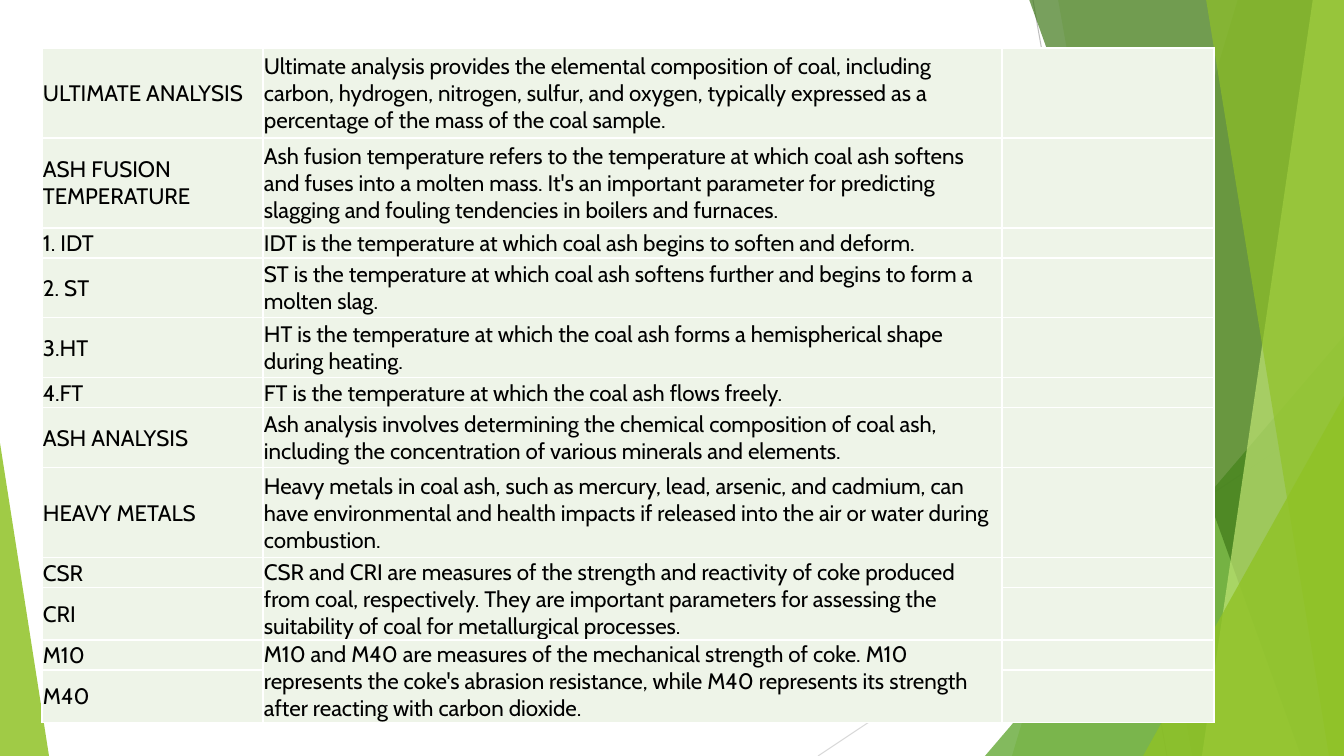
"""Build a slide with a table of coal quality parameters over green facets."""
import pptx
import pptx.dml.color
import pptx.enum.shapes
import pptx.enum.text
import pptx.oxml
import pptx.oxml.ns
import pptx.oxml.xmlchemy
import pptx.util

EMU_PER_PX = 914400 / 100.8
WIDTH, HEIGHT = 1344, 756
FONT = "Cabin"
COLORS = {
    "green": "90C226",
    "leaf": "54A021",
    "forest": "3F7819",
    "lime": "C0E474",
    "gray": "BFBFBF",
    "light_gray": "D9D9D9",
    "cell": "EEF4E8",
    "border": "FFFFFF",
    "text": "000000",
}
COLUMN_WIDTHS = [221, 739, 212]
ROWS = [
    (90, "ULTIMATE ANALYSIS", "Ultimate analysis provides the elemental composition of coal, including carbon, hydrogen, nitrogen, sulfur, and oxygen, typically expressed as a percentage of the mass of the coal sample."),
    (90, "ASH FUSION TEMPERATURE", "Ash fusion temperature refers to the temperature at which coal ash softens and fuses into a molten mass. It's an important parameter for predicting slagging and fouling tendencies in boilers and furnaces."),
    (30, "1. IDT", "IDT is the temperature at which coal ash begins to soften and deform."),
    (60, "2. ST", "ST is the temperature at which coal ash softens further and begins to form a molten slag."),
    (60, "3.HT", "HT is the temperature at which the coal ash forms a hemispherical shape during heating."),
    (30, "4.FT", "FT is the temperature at which the coal ash flows freely."),
    (60, "ASH ANALYSIS", "Ash analysis involves determining the chemical composition of coal ash, including the concentration of various minerals and elements."),
    (90, "HEAVY METALS", "Heavy metals in coal ash, such as mercury, lead, arsenic, and cadmium, can have environmental and health impacts if released into the air or water during combustion."),
    (30, "CSR", "CSR and CRI are measures of the strength and reactivity of coke produced from coal, respectively. They are important parameters for assessing the suitability of coal for metallurgical processes."),
    (52, "CRI", ""),
    (30, "M10", "M10 and M40 are measures of the mechanical strength of coke. M10 represents the coke's abrasion resistance, while M40 represents its strength after reacting with carbon dioxide."),
    (52, "M40", ""),
]


def px(length):
    """Turn pixels into EMU."""
    return pptx.util.Emu(round(length * EMU_PER_PX))


def rgb(name):
    """Look up a named colour."""
    return pptx.dml.color.RGBColor.from_string(COLORS[name])


def add_child(parent, tag, **attributes):
    """Append an XML element with attributes and return it."""
    child = pptx.oxml.xmlchemy.OxmlElement(tag)
    for key, value in attributes.items():
        child.set(key, str(value))
    parent.append(child)
    return child


def paint_facet(shape, color, opacity):
    """Fill a facet with a translucent colour and no outline."""
    shape.shadow.inherit = False
    shape.line.fill.background()
    shape.fill.solid()
    shape.fill.fore_color.rgb = rgb(color)
    tag = pptx.oxml.ns.qn("a:srgbClr")
    fill_color = next(shape.fill._xPr.iter(tag))
    add_child(fill_color, "a:alpha", val=opacity * 1000)


def add_line(page, start, end, color):
    """Draw a thin background line."""
    line = page.shapes.add_connector(
        pptx.enum.shapes.MSO_CONNECTOR.STRAIGHT, *map(px, start + end))
    line.line.color.rgb = rgb(color)
    line.line.width = pptx.util.Pt(0.75)
    add_child(line._element.spPr, "a:effectLst")


def add_band(page, top_x, bottom_x, color, opacity):
    """Draw a slanted band that reaches the right edge."""
    outline = page.shapes.build_freeform(top_x, -1, scale=EMU_PER_PX)
    outline.add_line_segments([(WIDTH, -1), (WIDTH, HEIGHT), (bottom_x, HEIGHT)])
    paint_facet(outline.convert_to_shape(), color, opacity)


def add_corner(page, left, top, width, apex, color, opacity):
    """Draw a triangle that stands on the bottom edge."""
    shape = page.shapes.add_shape(
        pptx.enum.shapes.MSO_SHAPE.ISOSCELES_TRIANGLE,
        px(left), px(top), px(width), px(HEIGHT - top))
    shape.adjustments[0] = apex
    paint_facet(shape, color, opacity)


def add_text(para, text, size=16, font=FONT, color="text"):
    """Write formatted text, or only set the size of an empty paragraph."""
    if not text:
        para._p.get_or_add_endParaRPr().set("sz", str(size * 100))
        return
    span = para.add_run()
    span.text = text
    span.font.size = pptx.util.Pt(size)
    span.font.name = font
    span.font.color.rgb = rgb(color)


def format_cell(cell, text):
    """Set the margins, borders, fill and text of a table cell."""
    cell.margin_left = cell.margin_right = cell.margin_top = px(1)
    cell.margin_bottom = 0
    cell.vertical_anchor = pptx.enum.text.MSO_ANCHOR.MIDDLE
    properties = cell._tc.get_or_add_tcPr()
    for side in ("a:lnL", "a:lnR", "a:lnT", "a:lnB"):
        border = add_child(properties, side, w=pptx.util.Pt(1))
        fill = add_child(border, "a:solidFill")
        add_child(fill, "a:srgbClr", val=COLORS["border"])
    cell.fill.solid()
    cell.fill.fore_color.rgb = rgb("cell")
    add_text(cell.text_frame.paragraphs[0], text)


def add_parameter_table(page, left, top):
    """Add the table, merging each description with the empty one below it."""
    heights = [row[0] for row in ROWS]
    table = page.shapes.add_table(
        len(ROWS), len(COLUMN_WIDTHS), px(left), px(top),
        px(sum(COLUMN_WIDTHS)), px(sum(heights))).table
    table.first_row = table.horz_banding = False
    for column, width in zip(table.columns, COLUMN_WIDTHS):
        column.width = px(width)
    for index, (height, name, description) in enumerate(ROWS):
        table.rows[index].height = px(height)
        for column, text in enumerate((name, description, "")):
            format_cell(table.cell(index, column), text)
        if not description:
            table.cell(index - 1, 1).merge(table.cell(index, 1))


def add_background(page):
    """Draw the lines and green facets behind the table."""
    add_line(page, (1033, 0), (1167, HEIGHT), "gray")
    add_line(page, (WIDTH, 406), (818, HEIGHT), "light_gray")
    add_band(page, 1238, 1012, "green", 30)
    add_band(page, 1058, 1192, "green", 20)
    add_corner(page, 985, 336, 359, 1, "leaf", 72)
    add_band(page, 1029, 1301, "forest", 70)
    add_band(page, 1313, 1202, "lime", 70)
    add_band(page, 1206, 1329, "green", 65)
    add_corner(page, 1143, 396, 201, 1, "green", 80)
    add_corner(page, 0, 443, 49, 0, "green", 85)


def main():
    """Build and save the deck."""
    deck = pptx.Presentation()
    deck.slide_width, deck.slide_height = px(WIDTH), px(HEIGHT)
    page = deck.slides.add_slide(deck.slide_layouts[6])
    add_background(page)
    add_parameter_table(page, 42, 48)
    deck.save("out.pptx")


if __name__ == "__main__":
    main()
